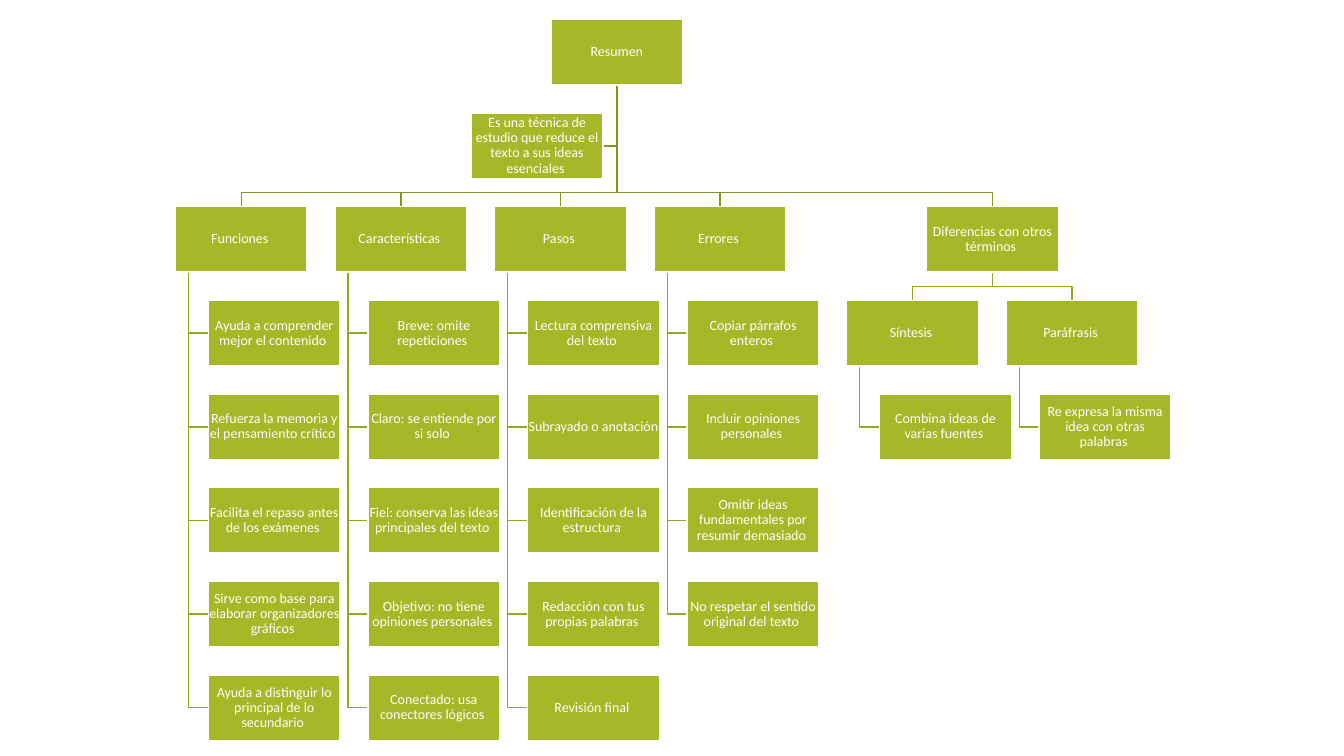
from pptx import Presentation
from pptx.dml.color import RGBColor
from pptx.enum.shapes import MSO_SHAPE as Preset
from pptx.enum.text import MSO_ANCHOR as Anchor, PP_ALIGN as Align
from pptx.util import Cm, Inches, Pt

GREEN = RGBColor(0xA6, 0xB7, 0x27)
ROOT_LINK = RGBColor(0x85, 0x93, 0x1F)
BRANCH_LINK = RGBColor(0x97, 0xA6, 0x23)
WHITE = RGBColor(0xFF, 0xFF, 0xFF)

# Grid of the chart
BOX_W, BOX_H = Cm(3.32), Cm(1.65)
COLUMN, ROW = Cm(4.02), Cm(2.36)
LEFT, TOP = Cm(4.42), Cm(0.49)
INDENT = Cm(0.83)
TRUNK = Cm(0.33)
HALF_GAP = (ROW - BOX_H) // 2

# Topics with their ideas; a trailing space belongs to most labels
BRANCHES = [
    ("Funciones ", [
        "Ayuda a comprender mejor el contenido ",
        "Refuerza la memoria y el pensamiento crítico ",
        "Facilita el repaso antes de los exámenes ",
        "Sirve como base para elaborar organizadores gráficos ",
        "Ayuda a distinguir lo principal de lo secundario "]),
    ("Características ", [
        "Breve: omite repeticiones ",
        "Claro: se entiende por si solo ",
        "Fiel: conserva las ideas principales del texto ",
        "Objetivo: no tiene opiniones personales ",
        "Conectado: usa conectores lógicos "]),
    ("Pasos ", [
        "Lectura comprensiva del texto ",
        "Subrayado o anotación ",
        "Identificación de la estructura ",
        "Redacción con tus propias palabras ",
        "Revisión final "]),
    ("Errores ", [
        "Copiar párrafos enteros ",
        "Incluir opiniones personales ",
        "Omitir ideas fundamentales por resumir demasiado ",
        "No respetar el sentido original del texto "]),
]
TERMS = [
    ("Síntesis ", ["Combina ideas de varias fuentes "]),
    ("Paráfrasis ", ["Re expresa la misma idea con otras palabras "]),
]


def add_box(slide, label, left, top):
    box = slide.shapes.add_shape(Preset.RECTANGLE, left, top, BOX_W, BOX_H)
    box.shadow.inherit = False
    box.fill.solid()
    box.fill.fore_color.rgb = GREEN
    box.line.color.rgb = WHITE
    box.line.width = Pt(1)
    frame = box.text_frame
    frame.word_wrap = True
    frame.vertical_anchor = Anchor.MIDDLE
    frame.margin_left = frame.margin_right = Cm(0.02)
    frame.margin_top = frame.margin_bottom = Cm(0.02)
    frame.text = label
    paragraph = frame.paragraphs[0]
    paragraph.alignment = Align.CENTER
    paragraph.line_spacing = 0.9
    paragraph.space_after = Pt(3.5)
    font = paragraph.runs[0].font
    font.name, font.size = "Calibri", Pt(10)
    font.color.rgb = WHITE


def add_link(slide, color, start, *bends):
    builder = slide.shapes.build_freeform(*start)
    builder.add_line_segments(bends, close=False)
    link = builder.convert_to_shape()
    link.shadow.inherit = False
    link.fill.background()
    link.line.color.rgb = color
    link.line.width = Pt(1)


def link_below(slide, color, left, top, child_left, child_top):
    """Join the bottom centre of a box to the top centre of a lower one."""
    x, child_x = left + BOX_W // 2, child_left + BOX_W // 2
    bend = child_top - HALF_GAP
    add_link(slide, color, (x, top + BOX_H), (x, bend),
             (child_x, bend), (child_x, child_top))


def add_branch(slide, topic, ideas, left, top):
    """Topic box with its ideas hanging from a trunk below it."""
    trunk, idea_left = left + TRUNK, left + INDENT
    idea_tops = [top + ROW * row for row in range(1, len(ideas) + 1)]
    for idea_top in idea_tops:
        middle = idea_top + BOX_H // 2
        add_link(slide, BRANCH_LINK, (trunk, top + BOX_H),
                 (trunk, middle), (idea_left, middle))
    add_box(slide, topic, left, top)
    for idea, idea_top in zip(ideas, idea_tops):
        add_box(slide, idea, idea_left, idea_top)


def add_differences(slide, left, top):
    """Topic box centred above its two terms."""
    topic_left = left + COLUMN // 2
    term_lefts = [left + COLUMN * i for i in range(len(TERMS))]
    for term_left in term_lefts:
        link_below(slide, BRANCH_LINK, topic_left, top, term_left, top + ROW)
    add_box(slide, "Diferencias con otros términos ", topic_left, top)
    for (term, ideas), term_left in zip(TERMS, term_lefts):
        add_branch(slide, term, ideas, term_left, top + ROW)


def add_root(slide, left, top, topic_lefts):
    """Main concept, its definition at the side, and links to all topics."""
    definition_left, definition_top = left - COLUMN // 2, top + ROW
    x, middle = left + BOX_W // 2, definition_top + BOX_H // 2
    add_link(slide, ROOT_LINK, (x, top + BOX_H), (x, middle),
             (definition_left + BOX_W, middle))
    for topic_left in topic_lefts:
        link_below(slide, ROOT_LINK, left, top, topic_left, top + 2 * ROW)
    add_box(slide, "Resumen", left, top)
    add_box(slide, "Es una técnica de estudio que reduce el texto a sus "
            "ideas esenciales ", definition_left, definition_top)


def main():
    deck = Presentation()
    deck.slide_width, deck.slide_height = Inches(13.33), Inches(7.5)
    slide = deck.slides.add_slide(deck.slide_layouts[6])

    # Positions of the five topics
    branch_lefts = [LEFT + COLUMN * i for i in range(len(BRANCHES))]
    differences_left = branch_lefts[-1] + COLUMN + INDENT
    topic_lefts = branch_lefts + [differences_left + COLUMN // 2]
    topics_top = TOP + 2 * ROW

    # Root above, branches and differences below
    add_root(slide, (topic_lefts[0] + topic_lefts[-1]) // 2, TOP, topic_lefts)
    for (topic, ideas), left in zip(BRANCHES, branch_lefts):
        add_branch(slide, topic, ideas, left, topics_top)
    add_differences(slide, differences_left, topics_top)

    deck.save("out.pptx")


if __name__ == "__main__":
    main()
